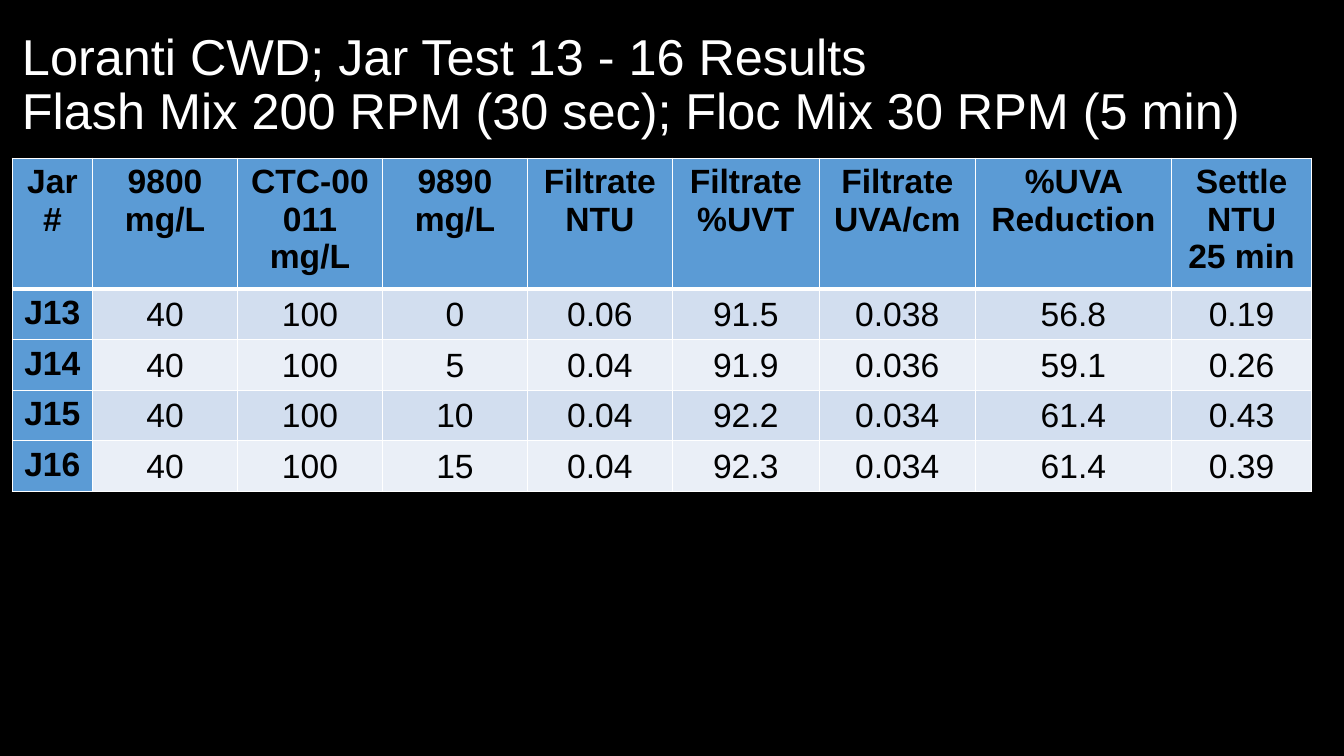
import lxml.etree
import pptx
import pptx.dml.color
import pptx.enum.text
import pptx.oxml.ns
import pptx.util

Inches = pptx.util.Inches
Pt = pptx.util.Pt
ALIGN = pptx.enum.text.PP_ALIGN
ANCHOR = pptx.enum.text.MSO_ANCHOR
qn = pptx.oxml.ns.qn

COLORS = {
    "background": "000000",
    "title": "FFFFFF",
    "text": "000000",
    "border": "FFFFFF",
    "heading": "5B9BD5",
    "odd": "D2DEEF",
    "even": "EAEFF7",
}
TITLE_LINES = [
    "Loranti CWD; Jar Test 13 - 16 Results",
    "Flash Mix 200 RPM (30 sec); Floc Mix 30 RPM (5 min)",
]
HEADINGS = [
    ["Jar#"],
    ["9800", "mg/L"],
    ["CTC-00011", "mg/L"],
    ["9890", "mg/L"],
    ["Filtrate", "NTU"],
    ["Filtrate", "%UVT"],
    ["Filtrate", "UVA/cm"],
    ["%UVA Reduction"],
    ["Settle", "NTU", "25 min"],
]
JARS = [
    ["J13", "40", "100", "0", "0.06", "91.5", "0.038", "56.8", "0.19"],
    ["J14", "40", "100", "5", "0.04", "91.9", "0.036", "59.1", "0.26"],
    ["J15", "40", "100", "10", "0.04", "92.2", "0.034", "61.4", "0.43"],
    ["J16", "40", "100", "15", "0.04", "92.3", "0.034", "61.4", "0.39"],
]
COLUMN_WIDTHS = [0.8, 1.44, 1.44, 1.44, 1.44, 1.46, 1.55, 1.95, 1.39]
HEADING_HEIGHT = 1.22
JAR_HEIGHT = 0.47


def rgb(name):
    return pptx.dml.color.RGBColor.from_string(COLORS[name])


def add_text(paragraph, text, size, color, bold=False):
    run = paragraph.add_run()
    run.text = text
    run.font.name = "Arial"
    run.font.size = Pt(size)
    run.font.bold = bold
    run.font.color.rgb = rgb(color)


def set_borders(cell, bottom_width):
    properties = cell._tc.get_or_add_tcPr()
    widths = {"lnL": 1, "lnR": 1, "lnT": 1, "lnB": bottom_width}
    for position, (side, width) in enumerate(widths.items()):
        line = lxml.etree.Element(qn("a:" + side), w=str(Pt(width)))
        fill = lxml.etree.SubElement(line, qn("a:solidFill"))
        lxml.etree.SubElement(fill, qn("a:srgbClr"), val=COLORS["border"])
        properties.insert(position, line)


def fill_cell(cell, lines, fill, bold, bottom_width=1):
    cell.fill.solid()
    cell.fill.fore_color.rgb = rgb(fill)
    set_borders(cell, bottom_width)
    for index, text in enumerate(lines):
        frame = cell.text_frame
        paragraph = frame.add_paragraph() if index else frame.paragraphs[0]
        paragraph.alignment = ALIGN.CENTER
        add_text(paragraph, text, 24, "text", bold)


def add_title(slide, left, top, width, height):
    frame = slide.shapes.add_textbox(
        Inches(left), Inches(top), Inches(width), Inches(height)
    ).text_frame
    frame.word_wrap = True
    frame.vertical_anchor = ANCHOR.MIDDLE
    paragraph = frame.paragraphs[0]
    paragraph.line_spacing = 0.9
    for index, text in enumerate(TITLE_LINES):
        if index:
            paragraph.add_line_break()
        add_text(paragraph, text, 36, "title")


def add_results(slide, left, top, width):
    height = HEADING_HEIGHT + JAR_HEIGHT * len(JARS)
    results = slide.shapes.add_table(
        len(JARS) + 1, len(HEADINGS),
        Inches(left), Inches(top), Inches(width), Inches(height),
    ).table
    results.first_col = True
    for column, share in zip(results.columns, COLUMN_WIDTHS):
        column.width = Inches(share * width / sum(COLUMN_WIDTHS))
    results.rows[0].height = Inches(HEADING_HEIGHT)
    for column, lines in enumerate(HEADINGS):
        fill_cell(results.cell(0, column), lines, "heading", True, 3)
    for row, jar in enumerate(JARS, 1):
        results.rows[row].height = Inches(JAR_HEIGHT)
        fill_cell(results.cell(row, 0), [jar[0]], "heading", True)
        for column, value in enumerate(jar[1:], 1):
            cell = results.cell(row, column)
            fill_cell(cell, [value], "odd" if row % 2 else "even", False)
            cell.vertical_anchor = ANCHOR.MIDDLE
            cell.margin_left = cell.margin_right = cell.margin_top = Inches(0.01)
            cell.margin_bottom = 0


def main():
    deck = pptx.Presentation()
    deck.slide_width = Inches(13.33)
    deck.slide_height = Inches(7.5)
    slide = deck.slides.add_slide(deck.slide_layouts[6])
    slide.background.fill.solid()
    slide.background.fill.fore_color.rgb = rgb("background")
    add_title(slide, 0.12, 0.13, 13.03, 1.45)
    add_results(slide, 0.12, 1.57, 12.89)
    deck.save("out.pptx")


if __name__ == "__main__":
    main()
